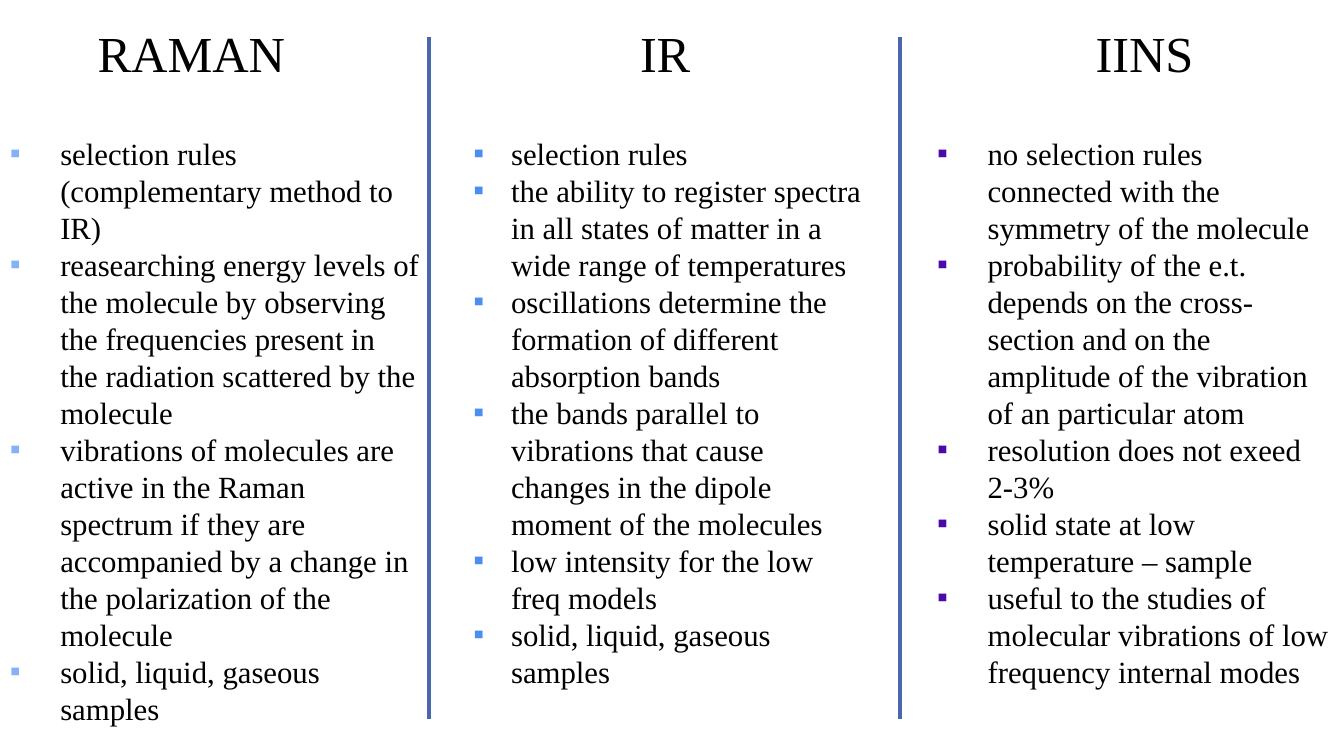
import pptx
import pptx.util
import pptx.dml.color
import pptx.enum.shapes
import pptx.enum.text
import pptx.oxml
import pptx.oxml.ns
import lxml.etree

Cm = pptx.util.Cm
COLORS = {
    "text": "000000",
    "divider": "4A66AC",
    "raman": "85B2F6",
    "ir": "4A8EF2",
    "iins": "4D08AA",
}
FONT = "Times New Roman"

methods = [
    ("RAMAN", "raman", 2.21, 5.97, 0, 10.82, 16.51, 1.27, [
        "selection rules (complementary method to IR)",
        "reasearching energy levels of the molecule by observing the frequencies present in the radiation scattered by the molecule",
        "vibrations of molecules are active in the Raman spectrum if they are accompanied by a change in the polarization of the molecule",
        "solid, liquid, gaseous samples",
    ]),
    ("IR", "ir", 15.88, 2.13, 11.68, 10.49, 14.35, 0.95, [
        "selection rules",
        "the ability to register spectra in all states of matter in a wide range of temperatures",
        "oscillations determine the formation of different absorption bands",
        "the bands parallel to vibrations that cause changes in the dipole moment of the molecules",
        "low intensity for the low freq models",
        "solid, liquid, gaseous samples",
    ]),
    ("IINS", "iins", 27.36, 3.3, 23.37, 10.49, 14.35, 1.27, [
        "no selection rules connected with the symmetry of the molecule",
        "probability of the e.t. depends on the cross-section and on the amplitude of the vibration of an particular atom",
        "resolution does not exeed 2-3%",
        "solid state at low temperature – sample",
        "useful to the studies of molecular vibrations of low frequency internal modes",
    ]),
]

presentation = pptx.Presentation()
presentation.slide_width = Cm(33.87)
presentation.slide_height = Cm(19.05)
slide = presentation.slides.add_slide(presentation.slide_layouts[6])


def add_text(left, top, width, height, lines, size):
    frame = slide.shapes.add_textbox(Cm(left), Cm(top), Cm(width), Cm(height)).text_frame
    frame.word_wrap = True
    frame.auto_size = pptx.enum.text.MSO_AUTO_SIZE.SHAPE_TO_FIT_TEXT
    frame.text = "\n".join(lines)
    for paragraph in frame.paragraphs:
        for run in paragraph.runs:
            run.font.name = FONT
            run.font.size = pptx.util.Pt(size)
            run.font.color.rgb = pptx.dml.color.RGBColor.from_string(COLORS["text"])
    return frame


def add_bullet(paragraph, indent, color):
    properties = paragraph._p.get_or_add_pPr()
    properties.set("marL", str(Cm(indent)))
    properties.set("indent", str(-Cm(indent)))
    bullet_color = lxml.etree.SubElement(properties, pptx.oxml.ns.qn("a:buClr"))
    lxml.etree.SubElement(bullet_color, pptx.oxml.ns.qn("a:srgbClr"), val=color)
    lxml.etree.SubElement(properties, pptx.oxml.ns.qn("a:buFont"), typeface=FONT)
    lxml.etree.SubElement(properties, pptx.oxml.ns.qn("a:buChar"), char="▪")


for heading, key, heading_left, heading_width, left, width, height, indent, features in methods:
    title = add_text(heading_left, 0.43, heading_width, 1.8, [heading], 36)
    title.word_wrap = False
    feature_list = add_text(left, 3.28, width, height, features, 22)
    for feature in feature_list.paragraphs:
        add_bullet(feature, indent, COLORS[key])

for x in (10.82, 22.68):
    divider = slide.shapes.add_connector(
        pptx.enum.shapes.MSO_CONNECTOR.STRAIGHT, Cm(x), Cm(0.94), Cm(x), Cm(18.11))
    divider.line.color.rgb = pptx.dml.color.RGBColor.from_string(COLORS["divider"])
    divider.line.width = pptx.util.Pt(3)
    lxml.etree.SubElement(divider._element.spPr, pptx.oxml.ns.qn("a:effectLst"))

presentation.save("out.pptx")
